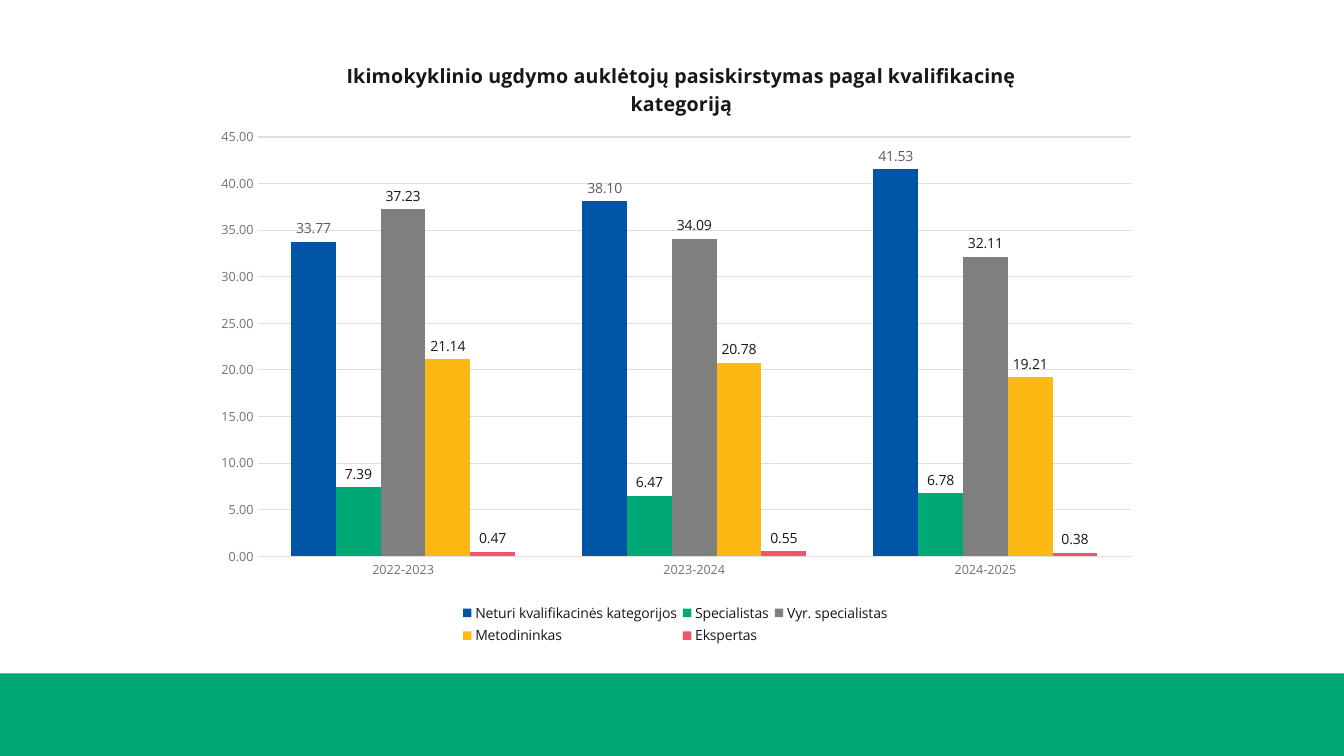
from lxml import etree
from pptx import Presentation
from pptx.chart.data import CategoryChartData
from pptx.dml.color import RGBColor
from pptx.enum.chart import XL_CHART_TYPE, XL_LABEL_POSITION, XL_LEGEND_POSITION, XL_TICK_MARK
from pptx.enum.shapes import MSO_SHAPE
from pptx.oxml.ns import qn
from pptx.util import Pt

COLUMNS = XL_CHART_TYPE.COLUMN_CLUSTERED
OUTSIDE_END = XL_LABEL_POSITION.OUTSIDE_END
LEGEND_BOTTOM = XL_LEGEND_POSITION.BOTTOM
NO_TICK = XL_TICK_MARK.NONE
RECTANGLE = MSO_SHAPE.RECTANGLE

TITLE = "Ikimokyklinio ugdymo auklėtojų pasiskirstymas pagal kvalifikacinę kategoriją"
SCHOOL_YEARS = ["2022-2023", "2023-2024", "2024-2025"]
# category, shares by school year, column colour, label colour
CATEGORIES = [
    ("Neturi kvalifikacinės kategorijos", (33.77, 38.10, 41.53), "blue", "label"),
    ("Specialistas", (7.39, 6.47, 6.78), "green", "text"),
    ("Vyr. specialistas", (37.23, 34.09, 32.11), "gray", "text"),
    ("Metodininkas", (21.14, 20.78, 19.21), "yellow", "text"),
    ("Ekspertas", (0.47, 0.55, 0.38), "red", "text"),
]
COLORS = {
    "blue": "0054A5", "green": "00A875", "gray": "7F7F7F", "yellow": "FCB813",
    "red": "EF566D", "text": "181717", "label": "5C5C5C", "axis": "727272",
    "grid": "DEDEDE",
}
FONT = "Open Sans"
NUMBER_FORMAT = "0.00"
SLIDE_WIDTH, SLIDE_HEIGHT = 960, 540
BAND_TOP = 481


def color(key):
    return RGBColor.from_string(COLORS[key])


def style_font(font, size, key, bold=False):
    font.name, font.size, font.bold = FONT, Pt(size), bold
    font.color.rgb = color(key)


def style_line(line, key):
    line.color.rgb = color(key)
    line.width = Pt(0.75)


def place(element, index, **settings):
    """Give a chart part a manual layout, in fractions of the chart area."""
    for old in element.findall(qn("c:layout")):
        element.remove(old)
    layout = etree.Element(qn("c:layout"))
    manual = etree.SubElement(layout, qn("c:manualLayout"))
    for tag, value in settings.items():
        etree.SubElement(manual, qn(f"c:{tag}")).set("val", str(value))
    element.insert(index, layout)


def add_band(slide):
    band = slide.shapes.add_shape(
        RECTANGLE, 0, Pt(BAND_TOP), Pt(SLIDE_WIDTH), Pt(SLIDE_HEIGHT - BAND_TOP))
    band.shadow.inherit = False
    band.fill.solid()
    band.fill.fore_color.rgb = color("green")
    band.line.fill.background()


def add_share_chart(slide):
    data = CategoryChartData(number_format=NUMBER_FORMAT)
    data.categories = SCHOOL_YEARS
    for name, shares, _, _ in CATEGORIES:
        data.add_series(name, shares)
    chart = slide.shapes.add_chart(
        COLUMNS, Pt(143.3), Pt(23), Pt(678.2), Pt(440.6), data).chart
    style_font(chart.font, 10, "text")

    title = chart.chart_title
    title.text_frame.text = TITLE
    style_font(title.text_frame.paragraphs[0].font, 14, "text", bold=True)
    title.include_layout = False

    plot = chart.plots[0]
    plot.gap_width, plot.overlap = 150, 0
    plot.vary_by_categories = False
    for series, (_, _, fill, label) in zip(plot.series, CATEGORIES):
        series.format.fill.solid()
        series.format.fill.fore_color.rgb = color(fill)
        labels = series.data_labels
        labels.show_value = True
        labels.number_format, labels.number_format_is_linked = NUMBER_FORMAT, False
        labels.position = OUTSIDE_END
        style_font(labels.font, 10, label)

    years, shares = chart.category_axis, chart.value_axis
    for axis in (years, shares):
        axis.major_tick_mark = axis.minor_tick_mark = NO_TICK
        style_font(axis.tick_labels.font, 9, "axis")
    style_line(years.format.line, "grid")
    style_line(shares.major_gridlines.format.line, "grid")
    shares.format.line.fill.background()
    shares.minimum_scale, shares.maximum_scale, shares.major_unit = 0, 45, 5
    shares.tick_labels.number_format = NUMBER_FORMAT
    shares.tick_labels.number_format_is_linked = False

    chart.has_legend = True
    legend = chart.legend
    legend.position = LEGEND_BOTTOM
    legend.include_in_layout = False
    style_font(legend.font, 10, "text")

    root = years._element.getparent().getparent()
    place(root.find(qn("c:title")), 1, xMode="edge", yMode="edge", x=0.15, y=0.04)
    place(root.find(qn("c:plotArea")), 0, layoutTarget="inner", xMode="edge",
          yMode="edge", x=0.06, y=0.17, w=0.92, h=0.68)
    place(root.find(qn("c:legend")), 1, xMode="edge", yMode="edge",
          x=0.27, y=0.92, w=0.46, h=0.08)


def main():
    deck = Presentation()
    deck.slide_width, deck.slide_height = Pt(SLIDE_WIDTH), Pt(SLIDE_HEIGHT)
    slide = deck.slides.add_slide(deck.slide_layouts[6])
    add_band(slide)
    add_share_chart(slide)
    deck.save("out.pptx")


if __name__ == "__main__":
    main()
